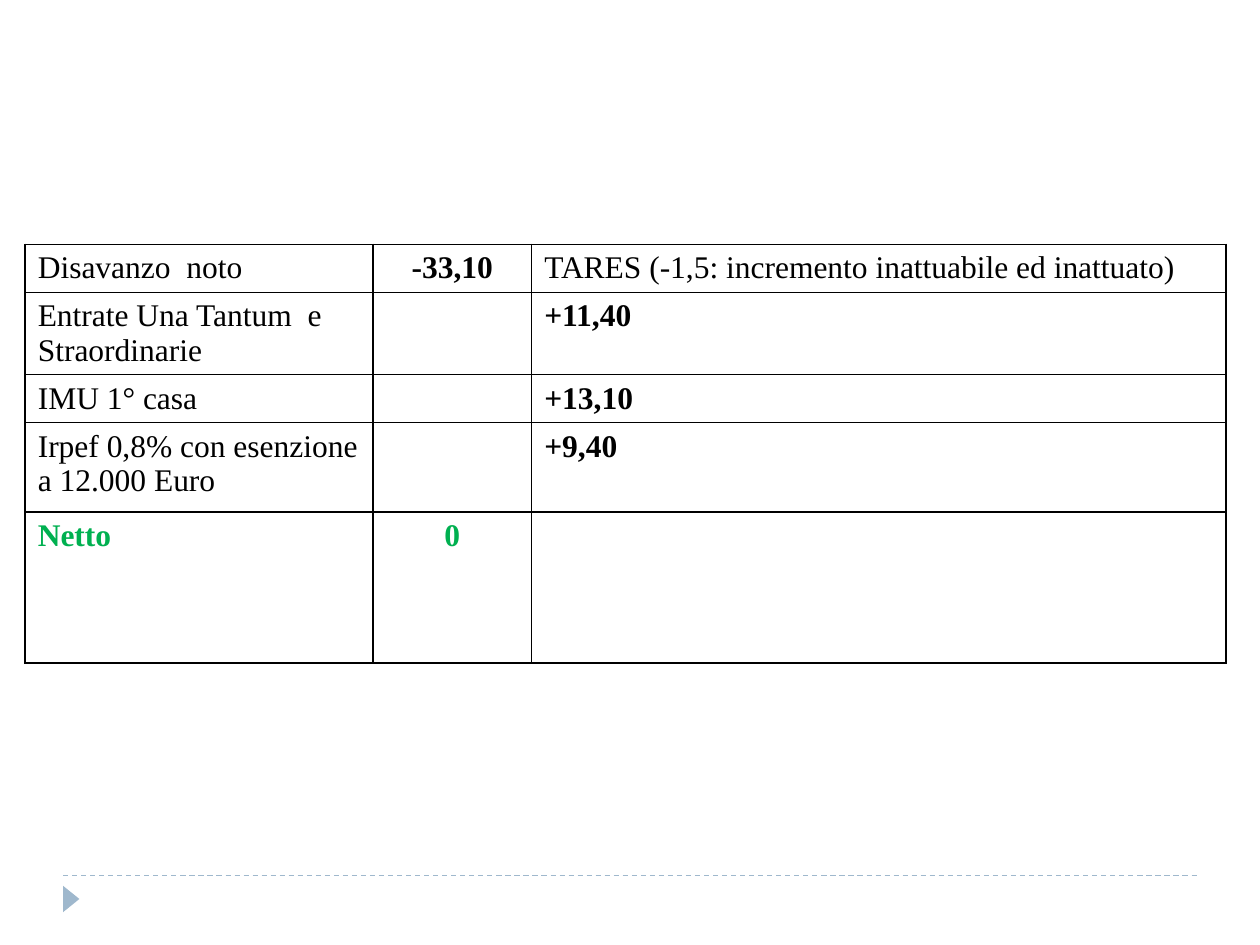
from lxml.etree import SubElement as Sub
from pptx import Presentation as Deck
from pptx.dml.color import RGBColor as Rgb
from pptx.enum.dml import MSO_LINE_DASH_STYLE as Dash
from pptx.enum.shapes import MSO_CONNECTOR as Conn, MSO_SHAPE as Form
from pptx.enum.text import PP_ALIGN as Align
from pptx.oxml import parse_xml as to_xml
from pptx.oxml.ns import nsdecls, qn
from pptx.util import Inches, Pt

COLS = [2.76, 1.26, 5.51]
ROWS = [0.38, 0.65, 0.38, 0.71, 1.2]
BLACK, GREEN, BLUE = "000000", "00B050", "9FB8CD"
DATA = [
    ["Disavanzo  noto", "-33,10", "TARES (-1,5: incremento inattuabile ed inattuato)"],
    ["Entrate Una Tantum  e Straordinarie", "", "+11,40"],
    ["IMU 1° casa", "", "+13,10"],
    ["Irpef 0,8% con esenzione a 12.000 Euro", "", "+9,40"],
    ["Netto", "0", ""],
]
BOLD = {"-33,10", "+11,40", "+13,10", "+9,40", "Netto", "0"}


def color(part, code):
    part.rgb = Rgb.from_string(code)


def apply(part, values):
    for name, value in values.items():
        setattr(part, name, value)


def border(cell):
    props = cell._tc.get_or_add_tcPr()
    for at, side in enumerate(("lnL", "lnR", "lnT", "lnB")):
        props.insert(at, to_xml(
            f'<a:{side} {nsdecls("a")} w="12700"><a:solidFill>'
            f'<a:srgbClr val="{BLACK}"/></a:solidFill></a:{side}>'))


def write(cell, text, tint, align):
    cell.fill.background()
    border(cell)
    para = cell.text_frame.paragraphs[0]
    para.alignment = align
    font = para.font
    if text:
        run = para.add_run()
        run.text = text
        font = run.font
    apply(font, {"name": "Times New Roman", "size": Pt(18), "bold": text in BOLD})
    color(font.color, tint)


def budget(slide, left, top, width, height):
    grid = slide.shapes.add_table(
        len(ROWS), len(COLS), Inches(left), Inches(top), Inches(width), Inches(height)).table
    apply(grid, {"first_row": False, "horz_banding": False})
    for col, size in zip(grid.columns, COLS):
        col.width = Inches(size)
    for row, size in zip(grid.rows, ROWS):
        row.height = Inches(size)
    for r, texts in enumerate(DATA):
        tint = GREEN if texts[0] == "Netto" else BLACK
        for c, text in enumerate(texts):
            write(grid.cell(r, c), text, tint, Align.CENTER if c == 1 else Align.LEFT)


def footer(slide, left, top, width):
    rule = slide.shapes.add_connector(
        Conn.STRAIGHT, Inches(left), Inches(top), Inches(left + width), Inches(top))
    Sub(rule._element.spPr, qn("a:effectLst"))
    color(rule.line.color, BLUE)
    apply(rule.line, {"width": Pt(0.75), "dash_style": Dash.DASH})
    mark = slide.shapes.add_shape(
        Form.ISOSCELES_TRIANGLE, Inches(left - 0.04), Inches(top + 0.12),
        Inches(0.21), Inches(0.13))
    mark.rotation = 90
    mark.shadow.inherit = False
    mark.fill.solid()
    color(mark.fill.fore_color, BLUE)
    mark.line.fill.background()


def main():
    deck = Deck()
    apply(deck, {"slide_width": Inches(10), "slide_height": Inches(7.5)})
    slide = deck.slides.add_slide(deck.slide_layouts[6])
    footer(slide, 0.5, 6.95, 9)
    budget(slide, 0.2, 1.94, sum(COLS), sum(ROWS))
    deck.save("out.pptx")


if __name__ == "__main__":
    main()
